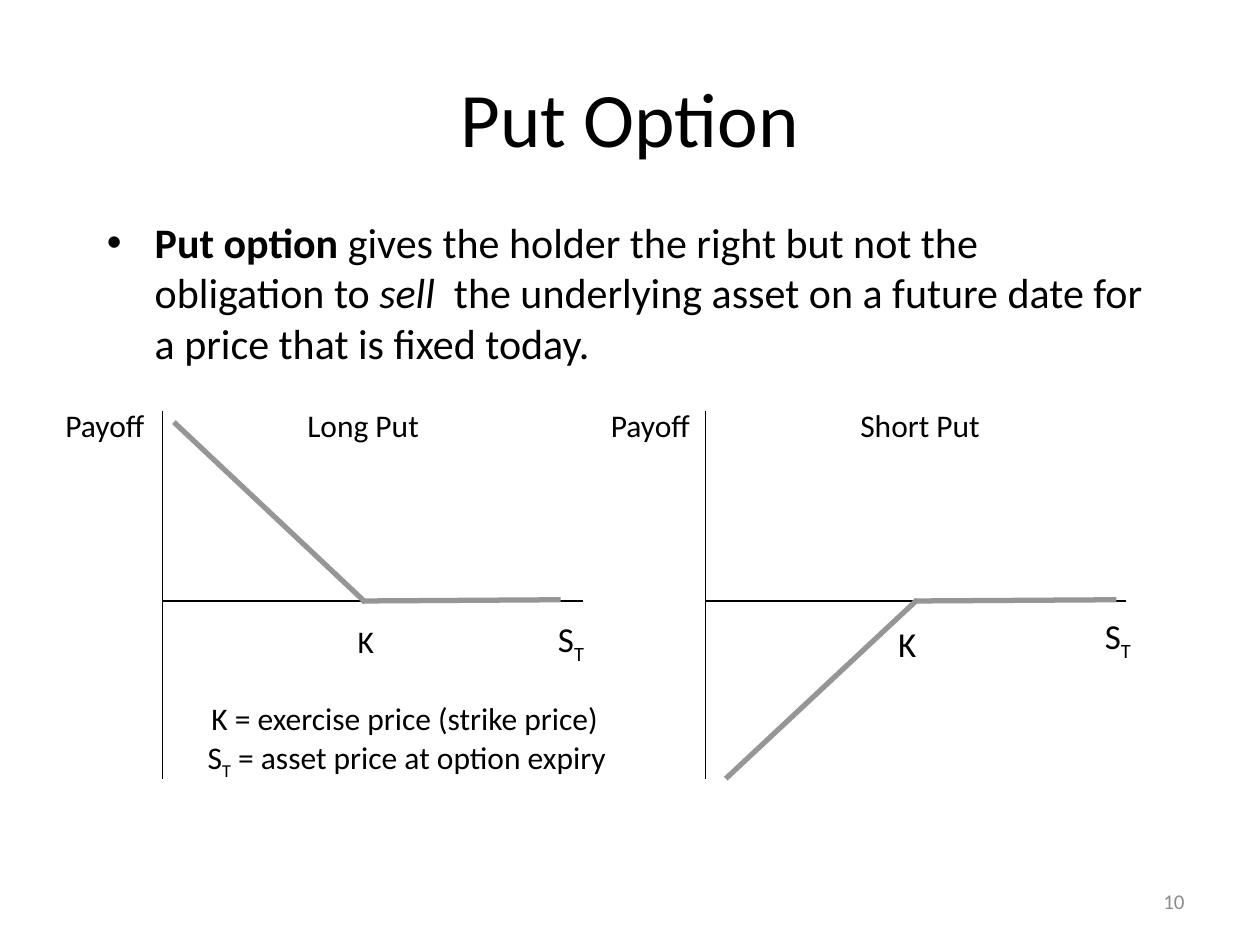
from lxml import etree
from pptx import Presentation
from pptx.dml.color import RGBColor
from pptx.enum.shapes import MSO_CONNECTOR
from pptx.enum.text import MSO_ANCHOR, PP_ALIGN
from pptx.oxml.ns import qn
from pptx.util import Inches, Pt

STRAIGHT = MSO_CONNECTOR.STRAIGHT
TOP, MIDDLE = MSO_ANCHOR.TOP, MSO_ANCHOR.MIDDLE
LEFT, CENTER, RIGHT = PP_ALIGN.LEFT, PP_ALIGN.CENTER, PP_ALIGN.RIGHT

BLACK = RGBColor(0x00, 0x00, 0x00)
PAYOFF_GRAY = RGBColor(0x96, 0x96, 0x96)
NUMBER_GRAY = RGBColor(0x8C, 0x8C, 0x8C)
FONT = "Calibri"

presentation = Presentation()
presentation.slide_width = Inches(10)
presentation.slide_height = Inches(7.5)
slide = presentation.slides.add_slide(presentation.slide_layouts[6])

# The slide is a grid of 100 columns by 75 rows.
COLUMN = presentation.slide_width / 100
ROW = presentation.slide_height / 75


def add_text(runs, left, top, width, height, size=18, color=BLACK,
             align=LEFT, anchor=TOP, wrap=False, bullet=False):
    """Add a text box; runs are (text, style) pairs, style being "", "bold", "italic" or "sub"."""
    box = slide.shapes.add_textbox(int(left * COLUMN), int(top * ROW),
                                   int(width * COLUMN), int(height * ROW))
    frame = box.text_frame
    frame.word_wrap = wrap
    frame.vertical_anchor = anchor
    paragraph = frame.paragraphs[0]
    paragraph.alignment = align
    for text, style in runs:
        run = paragraph.add_run()
        run.text = text
        run.font.name = FONT
        run.font.size = Pt(size)
        run.font.color.rgb = color
        run.font.bold = style == "bold"
        run.font.italic = style == "italic"
        if style == "sub":
            run._r.get_or_add_rPr().set("baseline", "-25000")
    if bullet:
        properties = paragraph._p.get_or_add_pPr()
        indent = Inches(0.38)
        properties.set("marL", str(indent))
        properties.set("indent", str(-indent))
        etree.SubElement(properties, qn("a:buFont")).set("typeface", "Arial")
        etree.SubElement(properties, qn("a:buChar")).set("char", "•")


def add_line(start, end, color=BLACK, weight=0.75):
    """Add a straight line between two (column, row) points."""
    line = slide.shapes.add_connector(
        STRAIGHT, int(start[0] * COLUMN), int(start[1] * ROW),
        int(end[0] * COLUMN), int(end[1] * ROW))
    line.line.color.rgb = color
    line.line.width = Pt(weight)
    etree.SubElement(line._element.spPr, qn("a:effectLst"))


add_text([("Put Option", "")], 5, 3, 90, 12.5, size=44,
         align=CENTER, anchor=MIDDLE, wrap=True)
add_text([("Put option ", "bold"),
          ("gives the holder the right but not the obligation to ", ""),
          ("sell", "italic"),
          ("  the underlying asset on a future date for a price that is fixed today.", "")],
         7.5, 16.7, 85, 46.7, size=24, wrap=True, bullet=True)
add_text([("10", "")], 71.7, 69.5, 23.3, 4, size=12, color=NUMBER_GRAY,
         align=RIGHT, anchor=MIDDLE, wrap=True)

AXIS_TOP, AXIS_BOTTOM, ZERO_ROW = 32.6, 61.8, 47.7
AXIS_WIDTH = 33.4
LABEL_ROW, LABEL_HEIGHT = 31.7, 4

# name, name column, name width, axis column, payoff label column,
# sloped payoff start and end, flat payoff start and end column,
# strike column and size, asset price column and row
diagrams = [
    ("Long Put", 23.4, 11.9, 12.9, 4.2,
     (13.8, 33.5), (29, 47.8), 28.7, 44.5, 27.4, 18, 43.3, 48.5),
    ("Short Put", 67.3, 12.4, 56, 47.5,
     (57.6, 61.8), (72.8, 47.6), 72.6, 88.6, 70.3, 20, 86.7, 48.3),
]
for (name, name_column, name_width, axis, payoff_column,
     slope_start, slope_end, flat_start, flat_end,
     strike_column, strike_size, price_column, price_row) in diagrams:
    add_line((axis, AXIS_TOP), (axis, AXIS_BOTTOM))
    add_line((axis, ZERO_ROW), (axis + AXIS_WIDTH, ZERO_ROW))
    add_line(slope_start, slope_end, color=PAYOFF_GRAY, weight=3)
    add_line((flat_start, ZERO_ROW), (flat_end, ZERO_ROW - 0.1),
             color=PAYOFF_GRAY, weight=3)
    add_text([("Payoff", "")], payoff_column, LABEL_ROW, 8.9, LABEL_HEIGHT)
    add_text([(name, "")], name_column, LABEL_ROW, name_width, LABEL_HEIGHT)
    add_text([("K", "")], strike_column, 48.9, 3.5, 4.4, size=strike_size)
    add_text([("S", ""), ("T", "sub")], price_column, price_row, 4.2, 4.4, size=20)

add_text([("K = exercise price (strike price)", "")], 15.8, 55, 37, LABEL_HEIGHT)
add_text([("S", ""), ("T", "sub"), (" = asset price at option expiry", "")],
         15.5, 58.1, 38, LABEL_HEIGHT)

presentation.save("out.pptx")
